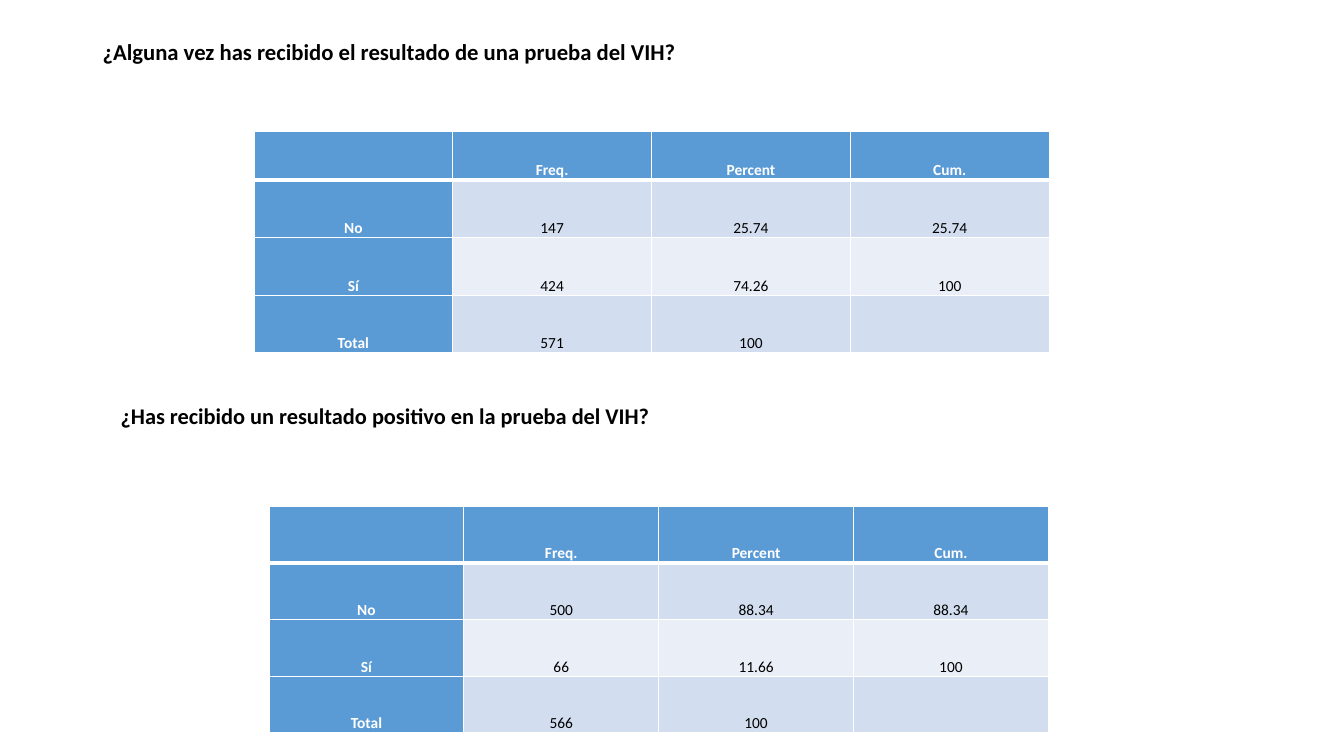
from lxml import etree
from pptx import Presentation
from pptx import util as u
from pptx.dml.color import RGBColor
from pptx.enum import text
from pptx.oxml import ns

COLORS = {"black": "000000", "white": "FFFFFF", "head": "5B9BD5",
          "band": "D2DEEF", "light": "EAEFF7"}


def write(frame, words, size=16, color="black", bold=True,
          align=text.PP_ALIGN.LEFT, spacing=1.0):
    paragraph = frame.paragraphs[0]
    paragraph.alignment, paragraph.line_spacing = align, spacing
    run = paragraph.add_run()
    run.text = words
    run.font.name, run.font.size, run.font.bold = "Calibri", u.Pt(size), bold
    run.font.color.rgb = RGBColor.from_string(COLORS[color])


class SurveySlide:
    """Holds the style and the current slide, and adds its elements."""

    def __init__(self, deck):
        self.slide = deck.slides.add_slide(deck.slide_layouts[5])

    def title(self, words, left, top, width, height):
        heading = self.slide.shapes.title
        heading.left, heading.top = u.Cm(left), u.Cm(top)
        heading.width, heading.height = u.Cm(width), u.Cm(height)
        frame = heading.text_frame
        frame.auto_size = text.MSO_AUTO_SIZE.NONE
        frame.vertical_anchor = text.MSO_ANCHOR.TOP
        frame.margin_top = 0
        write(frame, words, size=16.2, spacing=0.9)

    def question(self, words, left, top, width, height):
        frame = self.slide.shapes.add_textbox(
            u.Cm(left), u.Cm(top), u.Cm(width), u.Cm(height)).text_frame
        frame.word_wrap = True
        write(frame, words)

    def borders(self, cell, bottom):
        properties = cell._tc.get_or_add_tcPr()
        widths = {"lnL": 1, "lnR": 1, "lnT": 1, "lnB": bottom}
        for place, (side, points) in enumerate(widths.items()):
            line = etree.Element(ns.qn(f"a:{side}"), w=str(u.Pt(points)))
            fill = etree.SubElement(line, ns.qn("a:solidFill"))
            etree.SubElement(fill, ns.qn("a:srgbClr"), val=COLORS["white"])
            properties.insert(place, line)

    def frequencies(self, answers, left, top, column, heights):
        rows = [("", "Freq.", "Percent", "Cum."), *answers]
        table = self.slide.shapes.add_table(
            len(rows), 4, u.Cm(left), u.Cm(top),
            u.Cm(4 * column), u.Cm(sum(heights))).table
        for table_column in table.columns:
            table_column.width = u.Cm(column)
        for r, (values, height) in enumerate(zip(rows, heights)):
            table.rows[r].height = u.Cm(height)
            for c, value in enumerate(values):
                self.cell(table.cell(r, c), value, r, c)

    def cell(self, cell, value, r, c):
        label = r == 0 or c == 0
        fill = "head" if label else "band" if r % 2 else "light"
        cell.fill.solid()
        cell.fill.fore_color.rgb = RGBColor.from_string(COLORS[fill])
        self.borders(cell, bottom=1 if r else 3)
        if value:
            cell.vertical_anchor = text.MSO_ANCHOR.BOTTOM
            cell.margin_left = cell.margin_right = u.Cm(0.12)
            cell.margin_top = cell.margin_bottom = 0
            write(cell.text_frame, value, size=11, bold=label,
                  color="white" if label else "black",
                  align=text.PP_ALIGN.CENTER, spacing=1.15)


def main():
    deck = Presentation()
    deck.slide_width, deck.slide_height = u.Cm(33.87), u.Cm(19.05)
    survey = SurveySlide(deck)
    survey.title("¿Alguna vez has recibido el resultado de una prueba del VIH?",
                 2.33, 1.02, 29.21, 2.18)
    survey.frequencies([("No", "147", "25.74", "25.74"),
                        ("Sí", "424", "74.26", "100"),
                        ("Total", "571", "100", "")],
                       6.4, 3.3, 5.01, [1.24] + [1.45] * 3)
    survey.frequencies([("No", "500", "88.34", "88.34"),
                        ("Sí", "66", "11.66", "100"),
                        ("Total", "566", "100", "")],
                       6.78, 12.75, 4.91, [1.43] * 4)
    survey.question("¿Has recibido un resultado positivo en la prueba del VIH?",
                    2.79, 10.01, 22.94, 1.63)
    deck.save("out.pptx")


if __name__ == "__main__":
    main()
